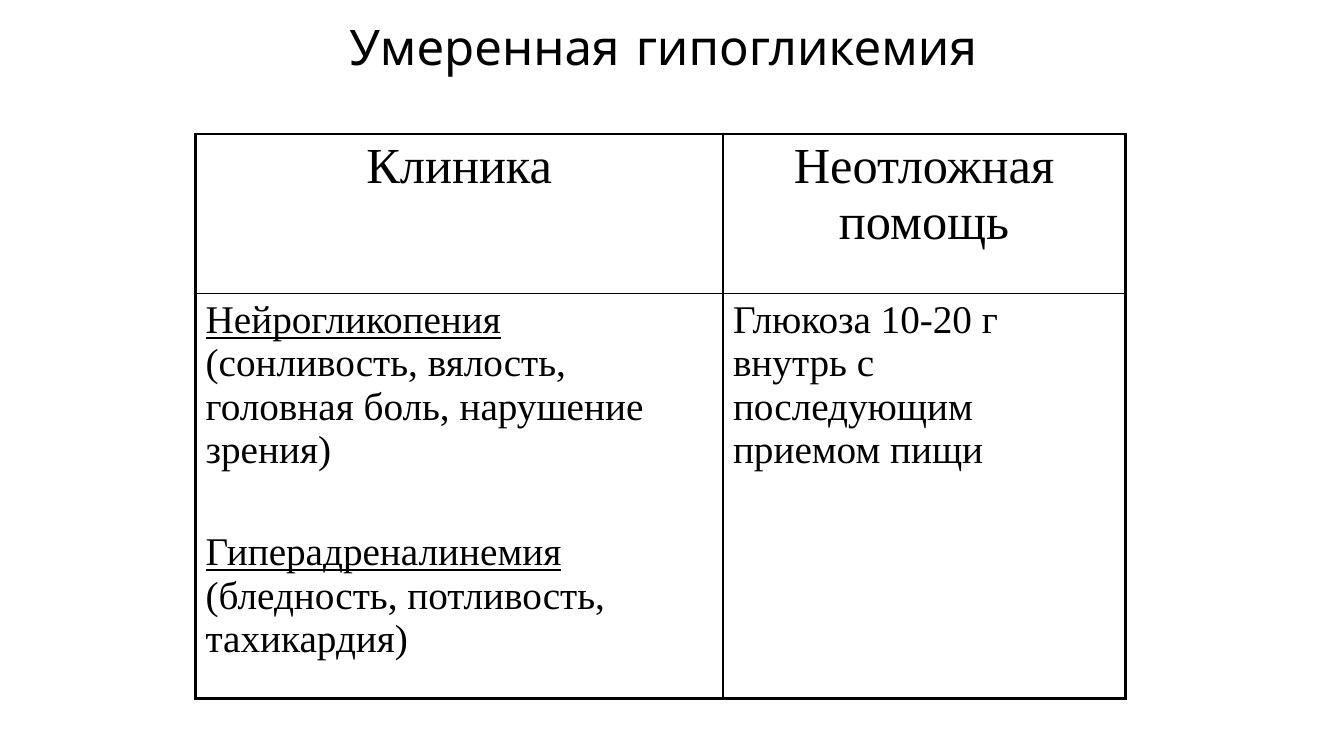
from lxml.etree import SubElement
from pptx import Presentation
from pptx.dml.color import RGBColor
from pptx.enum.text import MSO_ANCHOR, PP_ALIGN
from pptx.oxml.ns import qn
from pptx.util import Inches, Pt

COLORS = {"ink": "000000"}
BODY_FONT = "Times New Roman"
THICK, THIN = 2.25, 1


def write(para, text, size, font=BODY_FONT, align=PP_ALIGN.LEFT, before=0, underline=False):
    para.alignment = align
    para.space_before = Pt(before)
    span = para.add_run()
    span.text = text
    span.font.size = Pt(size)
    span.font.name = font
    span.font.underline = underline
    span.font.color.rgb = RGBColor.from_string(COLORS["ink"])


def add_borders(cell, widths):
    """Draw the left, right, top and bottom borders, with widths in points."""
    properties = cell._tc.get_or_add_tcPr()
    for side, width in zip(("a:lnL", "a:lnR", "a:lnT", "a:lnB"), widths):
        line = SubElement(properties, qn(side), w=str(Pt(width)))
        fill = SubElement(line, qn("a:solidFill"))
        SubElement(fill, qn("a:srgbClr"), val=COLORS["ink"])


deck = Presentation()
deck.slide_width, deck.slide_height = Inches(13.33), Inches(7.5)
page = deck.slides.add_slide(deck.slide_layouts[6])

title = page.shapes.add_textbox(Inches(2.33), Inches(0), Inches(8.5), Inches(0.92)).text_frame
title.word_wrap = True
title.vertical_anchor = MSO_ANCHOR.MIDDLE
write(title.paragraphs[0], "Умеренная гипогликемия", 35, font="Comic Neue", align=PP_ALIGN.CENTER)

table = page.shapes.add_table(2, 2, Inches(1.94), Inches(1.33), Inches(9.22), Inches(5.6)).table
table.first_row = table.horz_banding = False
for column, width in zip(table.columns, (5.23, 3.99)):
    column.width = Inches(width)
for row, height in zip(table.rows, (1.58, 4.02)):
    row.height = Inches(height)

for row in range(2):
    for column in range(2):
        cell = table.cell(row, column)
        cell.fill.background()
        add_borders(cell, (
            THIN if column else THICK,
            THICK if column else THIN,
            THIN if row else THICK,
            THICK if row else THIN,
        ))

for column, heading in enumerate(("Клиника", "Неотложная помощь")):
    para = table.cell(0, column).text_frame.paragraphs[0]
    write(para, heading, 36, align=PP_ALIGN.CENTER, before=7.2)

symptoms = table.cell(1, 0).text_frame
groups = (
    (symptoms.paragraphs[0], "Нейрогликопения",
     " (сонливость, вялость, головная боль, нарушение зрения)", 5.6),
    (symptoms.add_paragraph(), "Гиперадреналинемия ",
     "(бледность, потливость, тахикардия)", 42),
)
for para, name, signs, before in groups:
    write(para, name, 28, before=before, underline=True)
    write(para, signs, 28, before=before)

treatment = table.cell(1, 1).text_frame.paragraphs[0]
write(treatment, "Глюкоза 10-20 г внутрь с последующим приемом пищи", 28, before=5.6)

deck.save("out.pptx")
